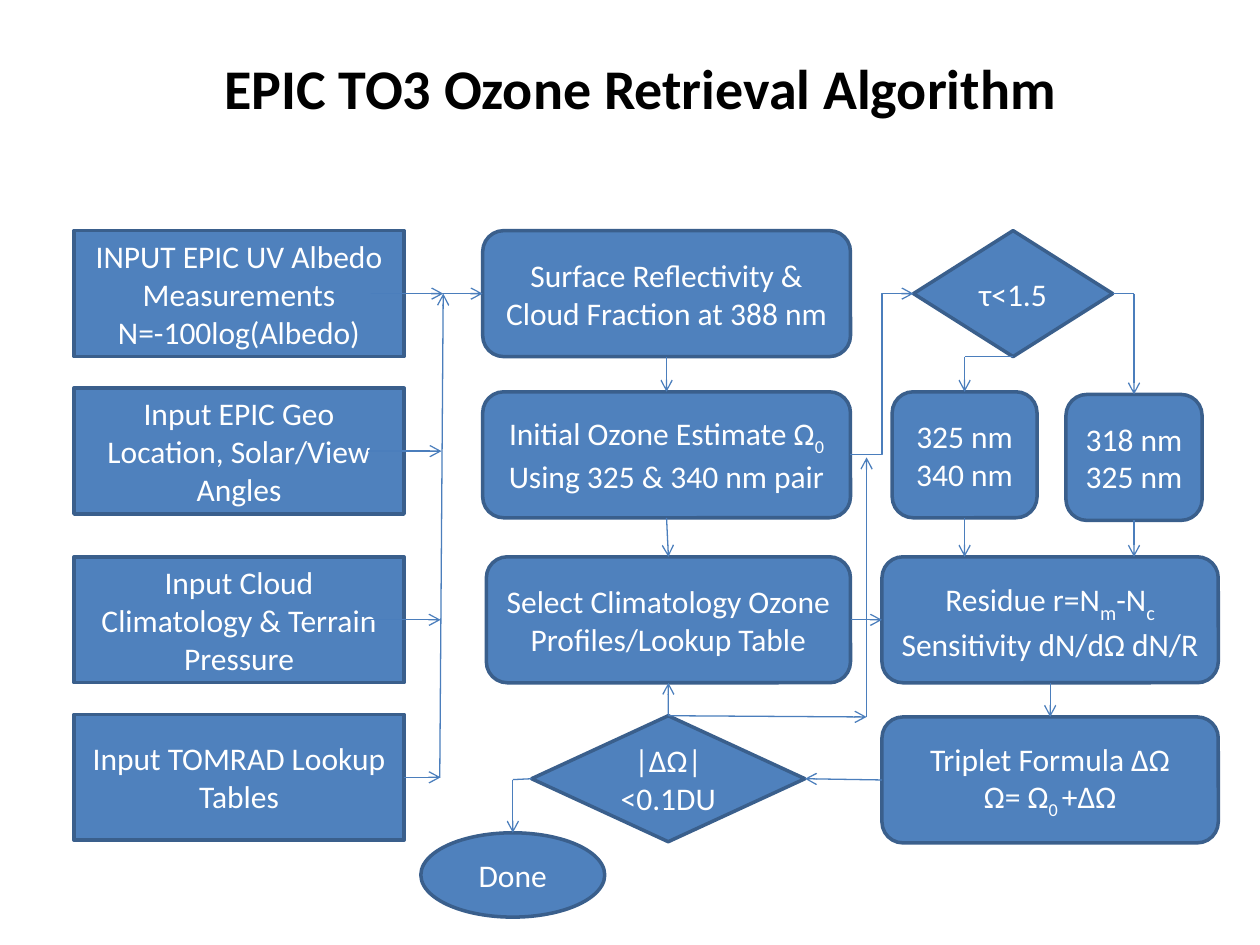
from dataclasses import dataclass

from lxml import etree
from pptx import Presentation
from pptx.dml.color import RGBColor
from pptx.enum.shapes import MSO_CONNECTOR, MSO_SHAPE
from pptx.enum.text import MSO_ANCHOR, PP_ALIGN
from pptx.oxml.ns import qn
from pptx.util import Pt

RECT = MSO_SHAPE.RECTANGLE
ROUND = MSO_SHAPE.ROUNDED_RECTANGLE
DIAMOND = MSO_SHAPE.DIAMOND
OVAL = MSO_SHAPE.OVAL
LINE = MSO_CONNECTOR.STRAIGHT
ELBOW = MSO_CONNECTOR.ELBOW
MIDDLE = MSO_ANCHOR.MIDDLE
CENTER = PP_ALIGN.CENTER
TOP, LEFT, BOTTOM, RIGHT = range(4)
TALL = 72


@dataclass(frozen=True)
class Theme:
    """Hold the colours, type sizes and line widths."""
    fill: RGBColor = RGBColor(0x4F, 0x81, 0xBD)
    edge: RGBColor = RGBColor(0x3A, 0x5F, 0x8C)
    wire: RGBColor = RGBColor(0x4B, 0x7E, 0xBC)
    white: RGBColor = RGBColor(0xFF, 0xFF, 0xFF)
    black: RGBColor = RGBColor(0, 0, 0)
    font: str = "Calibri"
    title: int = 32
    body: int = 18
    large: int = 20
    border: float = 2
    thin: float = 0.75


THEME = Theme()


def write(shape, text, size=THEME.body, color=THEME.white, bold=False, sub=THEME.body):
    """Fill a shape with centred lines, where ~marks~ enclose a subscript."""
    frame = shape.text_frame
    frame.word_wrap = True
    frame.vertical_anchor = MIDDLE
    for row, line in enumerate(text.split("\n")):
        para = frame.add_paragraph() if row else frame.paragraphs[0]
        para.alignment = CENTER
        for part, words in enumerate(line.split("~")):
            if not words:
                continue
            low = part % 2
            run = para.add_run()
            run.text = words
            font = run.font
            font.name, font.bold = THEME.font, bold
            font.size = Pt(sub if low else size)
            font.color.rgb = color
            if low:
                run._r.get_or_add_rPr().set("baseline", "-25000")


def node(slide, kind, box, text, **style):
    """Add one outlined block of the chart."""
    shape = slide.shapes.add_shape(kind, *map(Pt, box))
    shape.shadow.inherit = False
    shape.fill.solid()
    shape.fill.fore_color.rgb = THEME.fill
    shape.line.color.rgb = THEME.edge
    shape.line.width = Pt(THEME.border)
    write(shape, text, **style)
    return shape


def spot(end):
    """Give the place of a point or of a (shape, side) pair."""
    first, side = end
    if isinstance(first, (int, float)):
        return Pt(first), Pt(side)
    across = {LEFT: 0, RIGHT: first.width}.get(side, first.width // 2)
    down = {TOP: 0, BOTTOM: first.height}.get(side, first.height // 2)
    return first.left + across, first.top + down


def link(slide, start, end, kind=LINE, arrow=True):
    """Draw a connector and join it to any shape at its ends."""
    wire = slide.shapes.add_connector(kind, *spot(start), *spot(end))
    for place, join in ((start, wire.begin_connect), (end, wire.end_connect)):
        if not isinstance(place[0], (int, float)):
            join(*place)
    wire.line.color.rgb = THEME.wire
    wire.line.width = Pt(THEME.thin)
    if arrow:
        etree.SubElement(wire.get_or_add_ln(), qn("a:tailEnd"), type="arrow")
    etree.SubElement(wire._element.spPr, qn("a:effectLst"))


def heading(slide, box):
    """Place the title."""
    label = slide.shapes.add_textbox(*map(Pt, box))
    write(label, "EPIC TO3 Ozone Retrieval Algorithm",
          size=THEME.title, color=THEME.black, bold=True)


def inputs(slide, box):
    """Stack the four inputs and lead them into one rising line."""
    x, y, w, h = box
    rows = (
        (0, "INPUT EPIC UV Albedo Measurements\nN=-100log(Albedo)", 169.5, 211),
        (90, "Input EPIC Geo Location, Solar/View Angles", 168, 210),
        (186.4, "Input Cloud Climatology & Terrain Pressure", 168, 209.5),
        (h - TALL, "Input TOMRAD Lookup Tables", w, 209.5),
    )
    for down, text, _, _ in rows:
        node(slide, RECT, (x, y + down, w, TALL), text)
    for down, _, start, end in rows:
        mid = y + down + TALL / 2
        link(slide, (x + start, mid), (x + end, mid))
    join = (x + 211, y + TALL / 2)
    link(slide, (x + 209, y + h - TALL / 2), join)
    return join


def steps(slide, box):
    """Stack the three steps of the middle column."""
    x, y, w, h = box
    rows = (
        (0, 0, "Surface Reflectivity & Cloud Fraction at 388 nm"),
        (0, 92.1, "Initial Ozone Estimate Ω~0~ Using 325 & 340 nm pair"),
        (2.1, h - TALL, "Select Climatology Ozone Profiles/Lookup Table"),
    )
    stack = [node(slide, ROUND, (x + dx, y + dy, w - dx, TALL), text)
             for dx, dy, text in rows]
    for above, below in zip(stack, stack[1:]):
        link(slide, (above, BOTTOM), (below, TOP))
    return stack


def branch(slide, box):
    """Place the optical depth test, its two pairs, and the results."""
    x, y, w, h = box
    test = node(slide, DIAMOND, (x + 18, y, 113.8, TALL), "τ<1.5")
    near = node(slide, ROUND, (x + 5.8, y + 92.1, 82.8, TALL), "325 nm 340 nm")
    far = node(slide, ROUND, (x + 105.1, y + 93.6, 77.8, TALL), "318 nm\n325 nm")
    rest = node(slide, ROUND, (x, y + 186.4, w, TALL),
                "Residue r=N~m~-N~c~\nSensitivity dN/dΩ dN/R", sub=THEME.large)
    sums = node(slide, ROUND, (x, y + h - TALL, w, TALL),
                "Triplet Formula ΔΩ\nΩ= Ω~0 ~+ΔΩ")
    turns = ((RIGHT, far, 144, TALL / 2), (BOTTOM, near, 47.2, TALL))
    for side, pair, dx, dy in turns:
        bend = (x + dx, y + dy)
        link(slide, (test, side), bend, arrow=False)
        link(slide, bend, (pair, TOP))
        link(slide, (pair, BOTTOM), (x + dx, y + 186.4))
    link(slide, (rest, BOTTOM), (sums, TOP))
    return test, rest, sums


def finish(slide, box):
    """Place the closing test and the end mark."""
    x, y, w, h = box
    check = node(slide, DIAMOND, (x + 63.3, y, w - 63.3, TALL), "|ΔΩ|\n<0.1DU")
    done = node(slide, OVAL, (x, y + h - 48.2, 105.1, 48.2), "Done")
    bend = (x + 52.55, y + 36.5)
    link(slide, (check, LEFT), bend, arrow=False)
    link(slide, bend, (done, TOP))
    return check


def build():
    """Build and save the slide."""
    deck = Presentation()
    deck.slide_width, deck.slide_height = Pt(720), Pt(540)
    slide = deck.slides.add_slide(deck.slide_layouts[6])
    heading(slide, (36, 21.6, 660.2, 56.2))
    join = inputs(slide, (42.3, 131.8, 188.6, 348.4))
    first, guess, pick = steps(slide, (275.8, 131.8, 210.2, 258.4))
    test, rest, sums = branch(slide, (504, 131.8, 192.2, 349.9))
    check = finish(slide, (240.5, 409, 219.5, 115.1))
    link(slide, join, (first, LEFT))
    link(slide, (guess, RIGHT), (test, LEFT), kind=ELBOW)
    link(slide, (pick, RIGHT), (rest, LEFT))
    link(slide, (sums, LEFT), (check, RIGHT))
    link(slide, (check, TOP), (pick, BOTTOM))
    turn = (495.2, 409.7)
    link(slide, (check, TOP), turn)
    link(slide, turn, (495.2, 261.4))
    deck.save("out.pptx")


if __name__ == "__main__":
    build()
